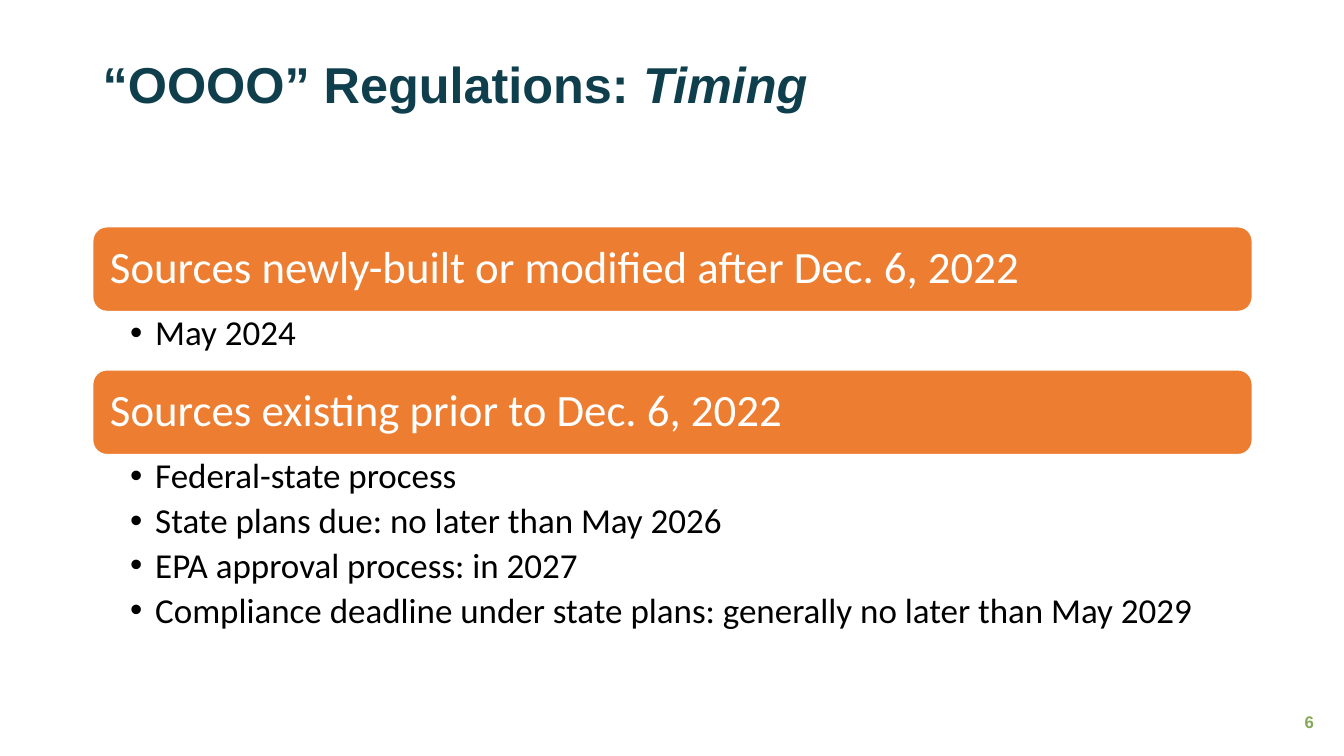
from lxml import etree
from pptx import Presentation
from pptx.dml.color import RGBColor
from pptx.enum.shapes import MSO_SHAPE as SHAPE
from pptx.enum.text import MSO_ANCHOR as ANCHOR, PP_ALIGN as ALIGN
from pptx.oxml.ns import qn
from pptx.util import Inches, Pt

WHITE = RGBColor(0xFF, 0xFF, 0xFF)
BLACK = RGBColor(0, 0, 0)
TEAL = RGBColor(0x0F, 0x3E, 0x4D)
ORANGE = RGBColor(0xED, 0x7D, 0x31)
GREEN = RGBColor(0x84, 0xA8, 0x56)

LEFT, WIDTH = 0.92, 11.5
BAND_HEIGHT = 0.84

SECTIONS = [
    (2.25, 0.58, "Sources newly-built or modified after Dec. 6, 2022", ["May 2024"]),
    (3.67, 1.88, "Sources existing prior to Dec. 6, 2022", [
        "Federal-state process",
        "State plans due: no later than May 2026",
        "EPA approval process: in 2027",
        "Compliance deadline under state plans: generally no later than May 2029",
    ]),
]


def add_text(p, text, size=25, font="Calibri", color=BLACK, bold=False, italic=False):
    r = p.add_run()
    r.text = text
    r.font.size = Pt(size)
    r.font.name = font
    r.font.color.rgb = color
    r.font.bold = bold
    r.font.italic = italic


def set_frame(tf, insets, anchor):
    tf.word_wrap = True
    tf.vertical_anchor = anchor
    tf.margin_left, tf.margin_top, tf.margin_right, tf.margin_bottom = map(Inches, insets)


def add_box(s, left, top, width, height, insets=(0.1, 0.05, 0.1, 0.05), anchor=ANCHOR.MIDDLE):
    sp = s.shapes.add_textbox(Inches(left), Inches(top), Inches(width), Inches(height))
    set_frame(sp.text_frame, insets, anchor)
    return sp.text_frame


def add_bullet(p):
    pPr = p._p.get_or_add_pPr()
    pPr.set("marL", str(Inches(0.25)))
    pPr.set("indent", str(Inches(-0.25)))
    etree.SubElement(pPr, qn("a:buFont")).set("typeface", "Arial")
    etree.SubElement(pPr, qn("a:buChar")).set("char", "•")


def add_band(s, top, text):
    sp = s.shapes.add_shape(SHAPE.ROUNDED_RECTANGLE, Inches(LEFT), Inches(top),
                            Inches(WIDTH), Inches(BAND_HEIGHT))
    sp.shadow.inherit = False
    sp.fill.solid()
    sp.fill.fore_color.rgb = ORANGE
    sp.line.color.rgb = WHITE
    sp.line.width = Pt(1)
    set_frame(sp.text_frame, (0.13, 0.13, 0.13, 0.13), ANCHOR.MIDDLE)
    p = sp.text_frame.paragraphs[0]
    p.alignment = ALIGN.LEFT
    p.line_spacing = 0.9
    add_text(p, text, size=32, color=WHITE)


def add_bullets(s, top, height, items):
    tf = add_box(s, LEFT, top, WIDTH, height, (0.37, 0.04, 0.25, 0.04), ANCHOR.TOP)
    for i, item in enumerate(items):
        p = tf.add_paragraph() if i else tf.paragraphs[0]
        add_bullet(p)
        p.level = 1
        p.line_spacing = 0.9
        p.space_after = Pt(5)
        add_text(p, item)


def add_title(s):
    p = add_box(s, LEFT, 0.14, WIDTH, 1.45).paragraphs[0]
    p.line_spacing = 0.9
    style = dict(size=36, font="Arial", color=TEAL, bold=True)
    add_text(p, "“OOOO” Regulations: ", **style)
    add_text(p, "Timing", italic=True, **style)


def add_page_number(s):
    p = add_box(s, 12.42, 6.96, 0.71, 0.4).paragraphs[0]
    p.alignment = ALIGN.RIGHT
    add_text(p, "6", size=12, font="Arial", color=GREEN, bold=True)


def main():
    prs = Presentation()
    prs.slide_width, prs.slide_height = Inches(13.33), Inches(7.5)
    s = prs.slides.add_slide(prs.slide_layouts[6])
    add_title(s)
    for top, height, heading, items in SECTIONS:
        add_band(s, top, heading)
        add_bullets(s, top + BAND_HEIGHT, height, items)
    add_page_number(s)
    prs.save("out.pptx")


if __name__ == "__main__":
    main()
